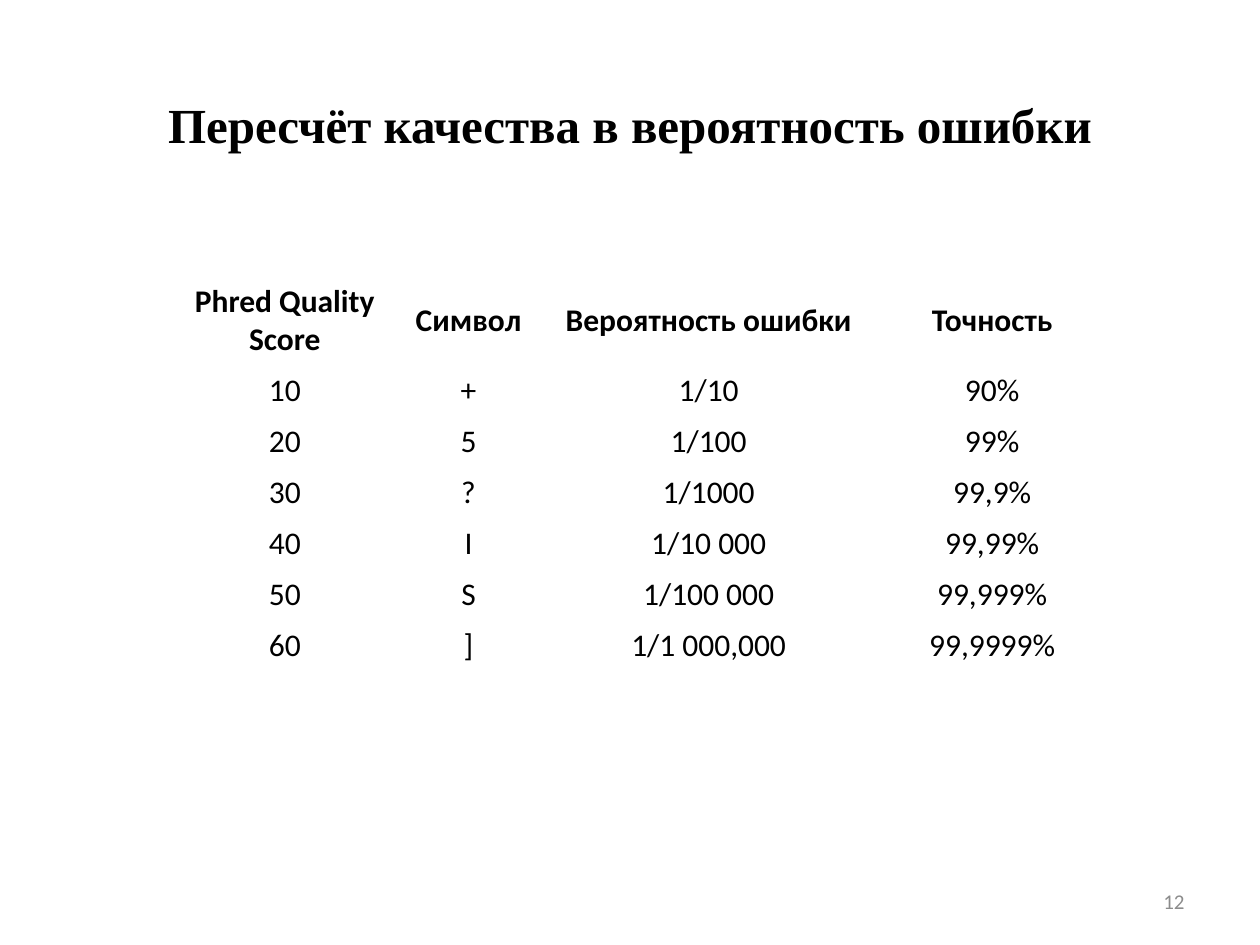
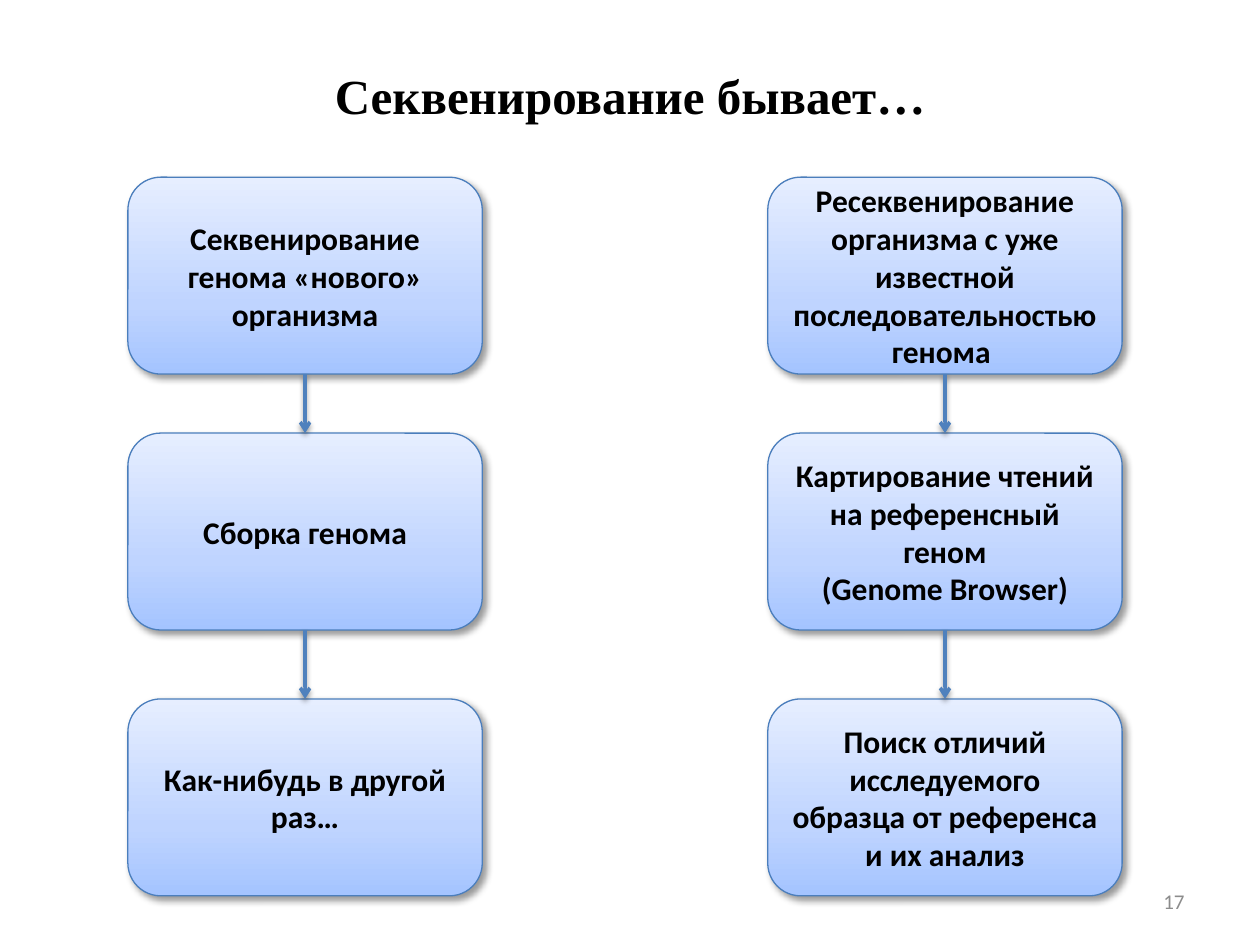
from copy import deepcopy

from lxml.etree import SubElement
from pptx import Presentation
from pptx.dml.color import RGBColor
from pptx.enum.shapes import MSO_CONNECTOR, MSO_SHAPE
from pptx.enum.text import MSO_ANCHOR, PP_ALIGN
from pptx.oxml.ns import qn
from pptx.util import Pt

BLACK, GREY = "000000", "8C8C8C"
BOX_EDGE, ARROW_BLUE = "4B7EBC", "4F81BD"
BOX_GRADIENT = [(0, "A4C4FF"), (0.35, "BFD4FF"), (1, "E6EEFF")]
TITLE_FONT, BODY_FONT = "Times New Roman", "Calibri"


def write(frame, text, size=18, bold=False, color=BLACK, font=BODY_FONT,
          align=PP_ALIGN.CENTER, anchor=MSO_ANCHOR.MIDDLE):
    """Fill a text frame or cell frame, one paragraph per line of text."""
    frame.word_wrap = True
    frame.vertical_anchor = anchor
    for index, line in enumerate(text.split("\n")):
        paragraph = frame.paragraphs[0] if index == 0 else frame.add_paragraph()
        paragraph.alignment = align
        run = paragraph.add_run()
        run.text = line
        run.font.name, run.font.size, run.font.bold = font, Pt(size), bold
        run.font.color.rgb = RGBColor.from_string(color)


def add_shadow(properties, opacity, blur, distance, angle):
    effects = properties.find(qn("a:effectLst"))
    if effects is None:
        effects = SubElement(properties, qn("a:effectLst"))
    shadow = SubElement(effects, qn("a:outerShdw"), blurRad=str(Pt(blur)),
                        dist=str(Pt(distance)), dir=str(angle * 60000), rotWithShape="0")
    color = SubElement(shadow, qn("a:srgbClr"), val=BLACK)
    SubElement(color, qn("a:alpha"), val=str(opacity * 1000))


deck = Presentation()
deck.slide_width, deck.slide_height = Pt(720), Pt(540)

# Titles and page numbers
slides = []
for heading, heading_top, page in [("Пересчёт качества в вероятность ошибки", 50.4, "12"),
                                   ("Секвенирование бывает…", 33.8, "17")]:
    slide = deck.slides.add_slide(deck.slide_layouts[6])
    title = slide.shapes.add_textbox(Pt(0), Pt(heading_top), Pt(720), Pt(41))
    write(title.text_frame, heading, size=28, bold=True, font=TITLE_FONT,
          anchor=MSO_ANCHOR.TOP)
    number = slide.shapes.add_textbox(Pt(516), Pt(500.5), Pt(168), Pt(28.75))
    write(number.text_frame, page, size=12, color=GREY, align=PP_ALIGN.RIGHT)
    slides.append(slide)
quality_slide, sequencing_slide = slides

# Quality scores
scores = [
    ("Phred Quality Score", "Символ", "Вероятность ошибки", "Точность"),
    ("10", "+", "1/10", "90%"),
    ("20", "5", "1/100", "99%"),
    ("30", "?", "1/1000", "99,9%"),
    ("40", "I", "1/10 000", "99,99%"),
    ("50", "S", "1/100 000", "99,999%"),
    ("60", "]", "1/1 000,000", "99,9999%"),
]
score_table = quality_slide.shapes.add_table(
    len(scores), 4, Pt(96), Pt(157.7), Pt(534), Pt(226)).table
score_table.first_row = score_table.horz_banding = False
for column, width in zip(score_table.columns, (133.5, 76.5, 198, 126)):
    column.width = Pt(width)
for row_index, values in enumerate(scores):
    is_header = row_index == 0
    score_table.rows[row_index].height = Pt(51 if is_header else 29.15)
    for column_index, value in enumerate(values):
        cell = score_table.cell(row_index, column_index)
        cell.fill.background()
        write(cell.text_frame, value, bold=is_header)
        cell.vertical_anchor = MSO_ANCHOR.MIDDLE

# Two sequencing workflows, each read downwards
BOX_WIDTH, BOX_HEIGHT = 202.5, 112.5
STEP_TOPS = (101.25, 247.5, 399.4)
workflows = [
    (73.1, ["Секвенирование генома «нового» организма",
            "Сборка генома",
            "Как-нибудь в другой раз…"]),
    (438.75, ["Ресеквенирование организма с уже известной последовательностью генома ",
              "Картирование чтений на референсный геном\n(Genome Browser)",
              "Поиск отличий исследуемого образца от референса и их анализ"]),
]
for left, steps in workflows:
    boxes = []
    for top, step in zip(STEP_TOPS, steps):
        box = sequencing_slide.shapes.add_shape(
            MSO_SHAPE.ROUNDED_RECTANGLE, Pt(left), Pt(top), Pt(BOX_WIDTH), Pt(BOX_HEIGHT))
        box.fill.gradient()
        box.fill.gradient_angle = 90
        stop_list = box._element.spPr.find(".//" + qn("a:gsLst"))
        stop_list.append(deepcopy(stop_list[0]))
        for stop, (position, color) in zip(box.fill.gradient_stops, BOX_GRADIENT):
            stop.position = position
            stop.color.rgb = RGBColor.from_string(color)
        box.line.color.rgb = RGBColor.from_string(BOX_EDGE)
        box.line.width = Pt(0.75)
        box.shadow.inherit = False
        add_shadow(box._element.spPr, opacity=40, blur=4, distance=3, angle=45)
        write(box.text_frame, step, bold=True)
        boxes.append(box)

    for upper, lower in zip(boxes, boxes[1:]):
        arrow = sequencing_slide.shapes.add_connector(MSO_CONNECTOR.STRAIGHT, 0, 0, 0, 0)
        arrow.begin_connect(upper, 2)
        arrow.end_connect(lower, 0)
        arrow.line.color.rgb = RGBColor.from_string(ARROW_BLUE)
        arrow.line.width = Pt(2)
        arrow_properties = arrow._element.spPr
        SubElement(arrow_properties.find(qn("a:ln")), qn("a:tailEnd"), type="arrow")
        add_shadow(arrow_properties, opacity=38, blur=3.1, distance=1.6, angle=90)

deck.save("out.pptx")
